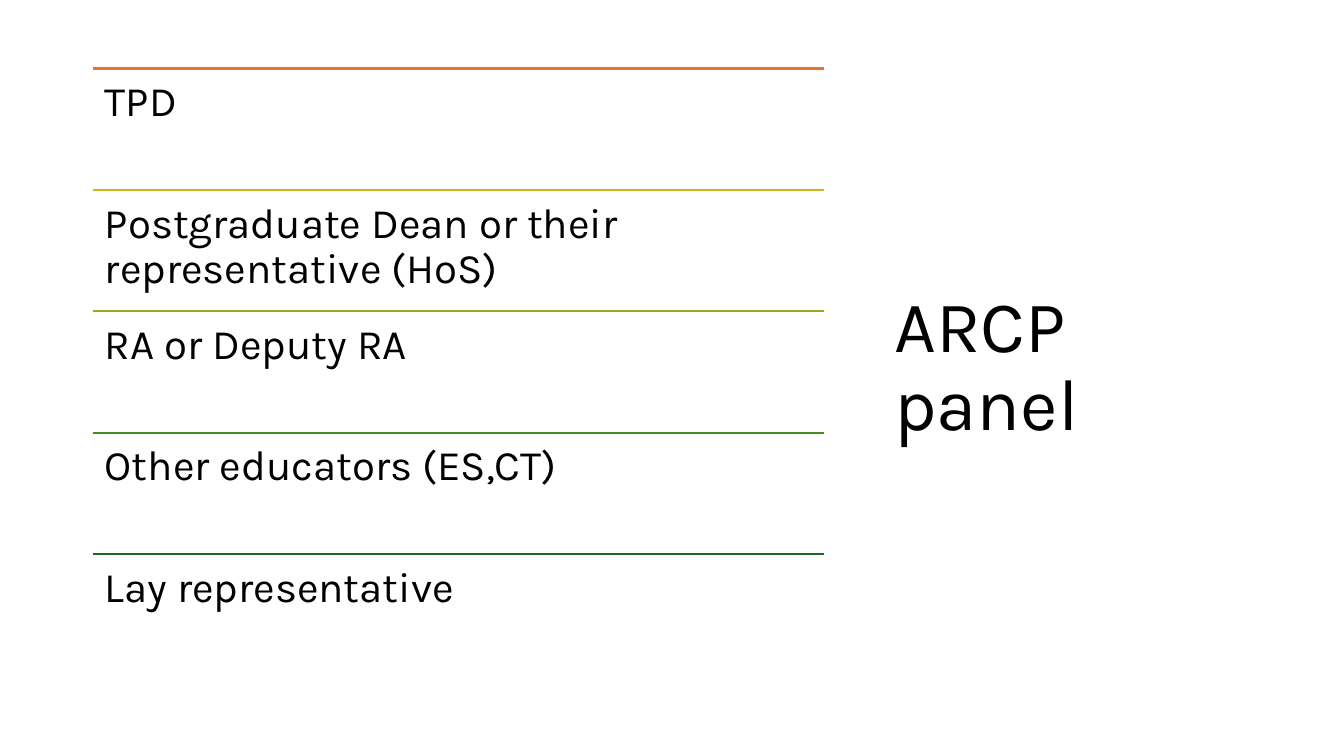
"""Build the ARCP panel slide: a ruled list of members beside the title."""
from lxml.etree import SubElement
from pptx import Presentation
from pptx.dml.color import RGBColor as RGB
from pptx.enum.shapes import MSO_CONNECTOR as CONN
from pptx.enum.text import MSO_ANCHOR as ANCHOR, MSO_AUTO_SIZE as AUTO, PP_ALIGN as ALIGN
from pptx.oxml.ns import qn
from pptx.util import Inches, Pt

TITLE = "ARCP panel"
MEMBERS = [
    ("TPD", RGB(0xE9, 0x71, 0x32)),
    ("Postgraduate Dean or their representative (HoS)", RGB(0xD8, 0xB1, 0x1D)),
    ("RA or Deputy RA", RGB(0x8E, 0xB2, 0x1E)),
    ("Other educators (ES,CT)", RGB(0x40, 0x8E, 0x1C)),
    ("Lay representative", RGB(0x19, 0x6B, 0x24)),
]
BLACK = RGB(0, 0, 0)
FONT = "Karla"
LEFT, TOP, WIDTH, HEIGHT = 0.92, 0.68, 7.25, 6.02
ROW = HEIGHT / len(MEMBERS)


def write(sp, text, size, anchor=ANCHOR.TOP, inset=(0.1, 0.05)):
    """Put formatted text into a shape."""
    tf = sp.text_frame
    tf.word_wrap = True
    tf.auto_size = AUTO.NONE
    tf.vertical_anchor = anchor
    tf.margin_left = tf.margin_right = Inches(inset[0])
    tf.margin_top = tf.margin_bottom = Inches(inset[1])
    p = tf.paragraphs[0]
    p.alignment = ALIGN.LEFT
    p.line_spacing = 0.9
    r = p.add_run()
    r.text = text
    r.font.name, r.font.size, r.font.color.rgb = FONT, Pt(size), BLACK


def add_rule(s, y, color):
    """Draw a horizontal rule across the list."""
    line = s.shapes.add_connector(
        CONN.STRAIGHT, Inches(LEFT), Inches(y), Inches(LEFT + WIDTH), Inches(y))
    line.line.color.rgb = color
    line.line.width = Pt(1.5)
    SubElement(line._element.spPr, qn("a:effectLst"))


def main():
    """Create and save the slide."""
    prs = Presentation()
    prs.slide_width, prs.slide_height = Inches(13.33), Inches(7.5)
    s = prs.slides.add_slide(prs.slide_layouts[5])
    title = s.shapes.title
    title.left, title.top = Inches(8.77), Inches(0.6)
    title.width, title.height = Inches(3.65), Inches(6.1)
    write(title, TITLE, 52, anchor=ANCHOR.MIDDLE)
    for i, (member, color) in enumerate(MEMBERS):
        y = TOP + i * ROW
        add_rule(s, y, color)
        sp = s.shapes.add_textbox(Inches(LEFT), Inches(y), Inches(WIDTH), Inches(ROW))
        write(sp, member, 30, inset=(0.12, 0.12))
    prs.save("out.pptx")


if __name__ == "__main__":
    main()
